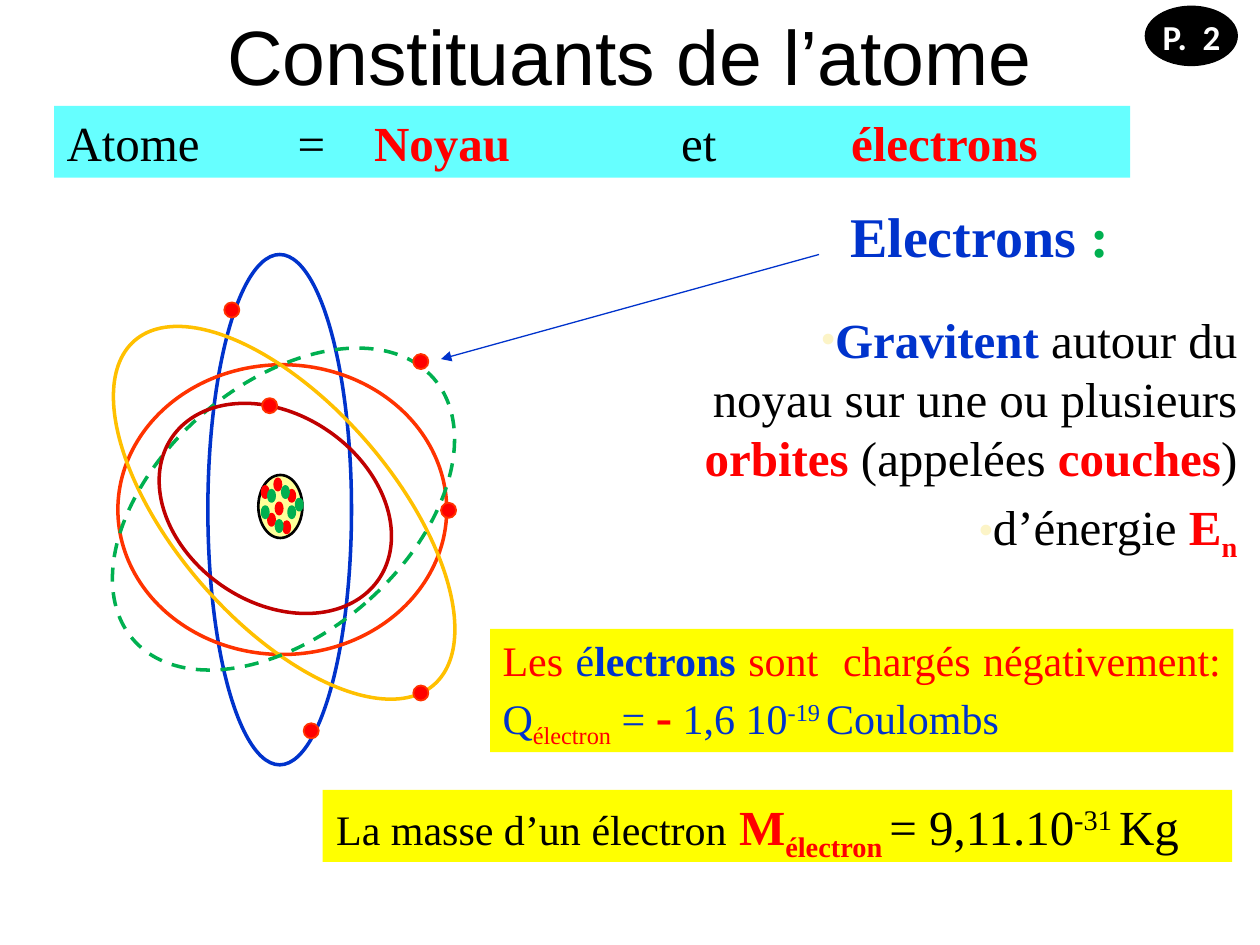
from lxml import etree
from pptx import Presentation
from pptx.dml.color import RGBColor
from pptx.enum import dml, shapes, text
from pptx.oxml.ns import qn
from pptx.util import Inches, Pt

SERIF = "Times New Roman"
BLACK, RED, BLUE, GREEN = "000000", "FF0000", "0033CC", "00B050"
YELLOW, ORANGE = "FFFF00", "FF3300"
LEFT, RIGHT, JUSTIFY = text.PP_ALIGN.LEFT, text.PP_ALIGN.RIGHT, text.PP_ALIGN.JUSTIFY


def color(value):
    return RGBColor.from_string(value)


def box(left, top, width, height):
    return [Inches(value) for value in (left, top, width, height)]


def write_runs(paragraph, pieces, font=SERIF):
    for words, size, tint, bold, baseline in pieces:
        run = paragraph.add_run()
        run.text = words
        run.font.name = font
        run.font.size = Pt(size)
        run.font.bold = bold
        run.font.color.rgb = color(tint)
        if baseline:
            run.font._element.set("baseline", str(baseline * 1000))


def set_indent(paragraph, margin, first):
    properties = paragraph._p.get_or_add_pPr()
    properties.set("marL", str(Inches(margin)))
    properties.set("indent", str(Inches(first)))
    return properties


def add_bullet(paragraph):
    properties = set_indent(paragraph, 0.6, -0.01)
    tint = etree.SubElement(properties, qn("a:buClr"))
    etree.SubElement(tint, qn("a:srgbClr"), val="FCF4C7")
    etree.SubElement(properties, qn("a:buSzPct"), val="80000")
    etree.SubElement(properties, qn("a:buChar"), char="•")


def add_label(parent, place, pieces, font=SERIF):
    label = parent.add_textbox(*box(*place))
    label.text_frame.word_wrap = False
    write_runs(label.text_frame.paragraphs[0], pieces, font)


def add_banner(parent, place, fill, pieces, before=0):
    banner = parent.add_shape(shapes.MSO_SHAPE.RECTANGLE, *box(*place))
    banner.shadow.inherit = False
    banner.fill.solid()
    banner.fill.fore_color.rgb = color(fill)
    banner.line.fill.background()
    frame = banner.text_frame
    frame.word_wrap = True
    frame.vertical_anchor = text.MSO_ANCHOR.TOP
    paragraph = frame.paragraphs[0]
    paragraph.alignment = JUSTIFY
    paragraph.space_before = Pt(before)
    write_runs(paragraph, pieces)
    return paragraph


def add_ellipse(parent, place, line, weight, fill=None, angle=0, dashed=False):
    ellipse = parent.add_shape(shapes.MSO_SHAPE.OVAL, *box(*place))
    ellipse.shadow.inherit = False
    ellipse.rotation = angle
    if fill:
        ellipse.fill.solid()
        ellipse.fill.fore_color.rgb = color(fill)
    else:
        ellipse.fill.background()
    ellipse.line.color.rgb = color(line)
    ellipse.line.width = Pt(weight)
    if dashed:
        ellipse.line.dash_style = dml.MSO_LINE.DASH


def add_arrow(parent, start, end):
    arrow = parent.add_connector(
        shapes.MSO_CONNECTOR.STRAIGHT, *[Inches(value) for value in start + end])
    arrow.line.color.rgb = color(BLUE)
    arrow.line.width = Pt(0.75)
    etree.SubElement(arrow.line._get_or_add_ln(), qn("a:tailEnd"), type="triangle")
    etree.SubElement(arrow._element.spPr, qn("a:effectLst"))


def place_title(title):
    title.left, title.top, title.width, title.height = box(0.5, -0.19, 9, 1.25)
    title.text_frame.text = "Constituants de l’atome"
    title.text_frame.vertical_anchor = text.MSO_ANCHOR.MIDDLE
    font = title.text_frame.paragraphs[0].runs[0].font
    font.name, font.size = "Arial", Pt(44)
    font.color.rgb = color(BLACK)


def place_properties(body):
    body.left, body.top, body.width, body.height = box(4.84, 2.41, 5.08, 2.08)
    frame = body.text_frame
    frame.word_wrap = True
    frame.auto_size = text.MSO_AUTO_SIZE.SHAPE_TO_FIT_TEXT
    points = [
        [("Gravitent", 28, BLUE, True, 0),
         (" autour du noyau sur une ou plusieurs ", 28, BLACK, False, 0),
         ("orbites", 28, RED, True, 0),
         (" (appelées ", 28, BLACK, False, 0),
         ("couches", 28, RED, True, 0),
         (")", 28, BLACK, False, 0)],
        [("d’énergie ", 28, BLACK, False, 0),
         ("E", 28, RED, True, 0),
         ("n", 28, RED, True, -25)],
    ]
    for index, pieces in enumerate(points):
        paragraph = frame.add_paragraph() if index else frame.paragraphs[0]
        paragraph.alignment = RIGHT
        paragraph.space_before = Pt(5.6)
        add_bullet(paragraph)
        write_runs(paragraph, pieces)


def draw_atom(atom):
    add_ellipse(atom, (2.05, 3.77, 0.35, 0.5), BLACK, 1.5, "FFFF99")
    protons = [(2.08, 3.86), (2.19, 3.99), (2.18, 3.8),
               (2.29, 3.89), (2.13, 4.08), (2.25, 4.14)]
    neutrons = [(2.13, 3.89), (2.08, 4.02), (2.24, 3.86),
                (2.35, 3.96), (2.19, 4.13), (2.29, 4.02)]
    for tint, nucleons in ((RED, protons), (GREEN, neutrons)):
        for left, top in nucleons:
            add_ellipse(atom, (left, top, 0.05, 0.09), tint, 1.5, tint)

    orbits = [
        ((1.65, 2.02, 1.14, 4.05), BLUE, 0),
        ((1.09, 2.74, 2.3, 2.61), ORANGE, 90),
        ((1.39, 2.26, 1.73, 3.62), "FFC000", 139),
        ((1.26, 2.46, 1.98, 3.16), GREEN, 229),
        ((1.44, 3.04, 1.49, 1.99), "C00000", 124.6),
    ]
    for place, tint, angle in orbits:
        add_ellipse(atom, place, tint, 2, angle=angle, dashed=tint == GREEN)

    electrons = [(1.78, 2.4), (3.28, 2.81), (3.5, 3.99),
                 (3.28, 5.44), (2.08, 3.16), (2.41, 5.74)]
    for left, top in electrons:
        add_ellipse(atom, (left, top, 0.12, 0.12), ORANGE, 1, RED)


def main():
    deck = Presentation()
    deck.slide_width, deck.slide_height = Inches(10), Inches(7.5)
    slide = deck.slides.add_slide(deck.slide_layouts[1])
    canvas = slide.shapes
    place_title(canvas.title)

    mass = add_banner(canvas, (2.56, 6.27, 7.22, 0.57), YELLOW, [
        ("\t", 28, BLACK, False, 0),
        ("La masse d’un électron", 24, BLACK, False, 0),
        (" ", 28, BLACK, False, 0),
        ("M", 28, RED, True, 0),
        ("électron ", 28, RED, True, -25),
        ("= 9,11.10", 28, BLACK, False, 0),
        ("-31 ", 28, BLACK, False, 30),
        ("Kg ", 28, BLACK, False, 0)], 5.6)
    set_indent(mass, 0.01, -0.01)

    place_properties(slide.placeholders[1])

    add_banner(canvas, (0.43, 0.84, 8.54, 0.57), "66FFFF", [
        ("Atome        =    ", 28, BLACK, False, 0),
        ("Noyau", 28, RED, True, 0),
        ("              et           ", 28, BLACK, False, 0),
        ("électrons", 28, RED, True, 0)])

    add_banner(canvas, (3.89, 4.99, 5.9, 0.98), YELLOW, [
        ("Les ", 24, RED, False, 0),
        ("é", 24, BLUE, False, 0),
        ("lectrons ", 24, BLUE, True, 0),
        ("sont  chargés négativement: ", 24, RED, False, 0),
        ("Q", 24, BLUE, False, 0),
        ("électron", 24, RED, False, -25),
        (" = ", 24, BLUE, False, 0),
        ("-", 28, RED, True, 0),
        (" 1,6 10", 24, BLUE, False, 0),
        ("-19 ", 24, BLUE, False, 30),
        ("Coulombs", 24, BLUE, False, 0)], 4.8)

    add_ellipse(canvas, (9.09, 0.05, 0.73, 0.47), BLACK, 0.75, BLACK)
    add_label(canvas, (9.13, 0.07, 0.66, 0.44),
              [("P.  2", 20, "FFFFFF", True, 0)], "Calibri")

    callout = canvas.add_group_shape().shapes
    add_label(callout, (6.65, 1.55, 2.39, 0.64),
              [("Electrons", 32, BLUE, True, 0), (" :", 32, GREEN, True, 0)])
    add_arrow(callout, (6.5, 2.02), (3.5, 2.85))

    draw_atom(canvas.add_group_shape().shapes)
    deck.save("out.pptx")


if __name__ == "__main__":
    main()
